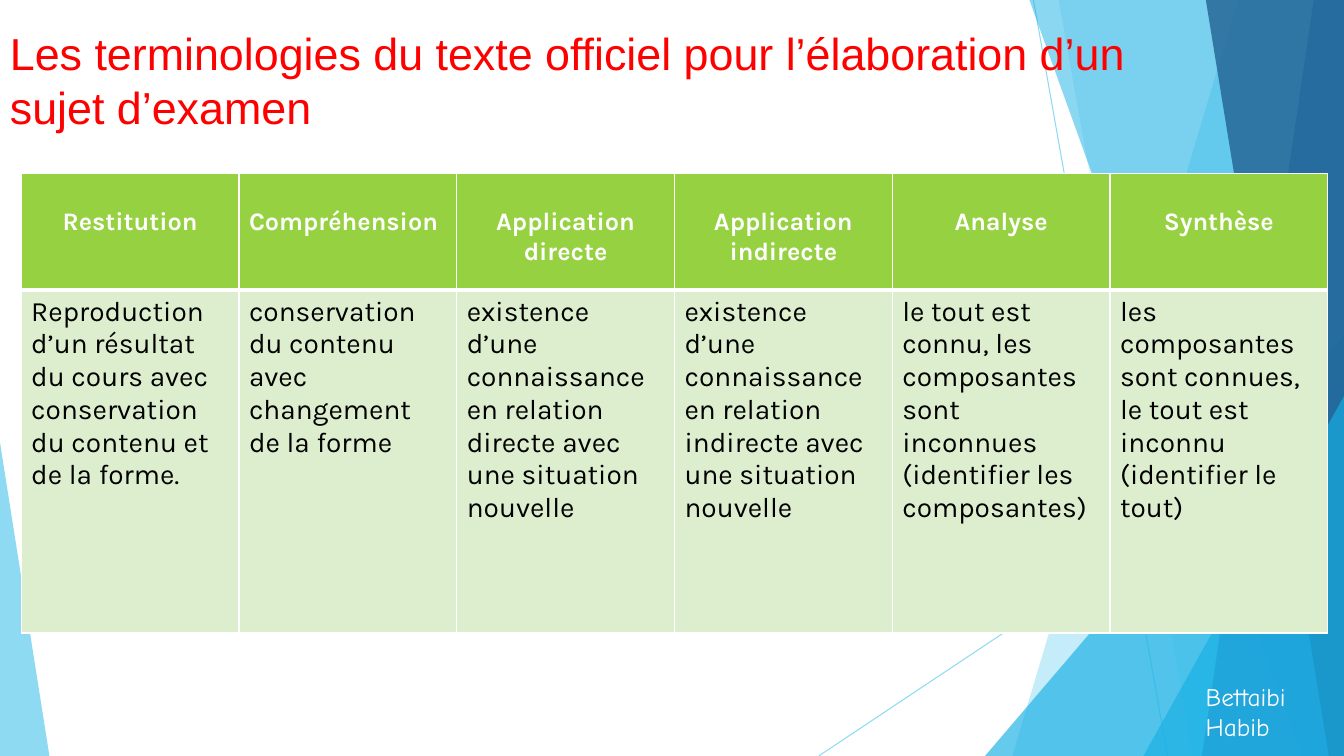
from lxml import etree
from pptx import Presentation
from pptx.dml.color import RGBColor
from pptx.enum.shapes import MSO_CONNECTOR, MSO_SHAPE
from pptx.enum.text import MSO_ANCHOR, PP_ALIGN
from pptx.oxml.ns import qn
from pptx.util import Inches, Pt

STRAIGHT = MSO_CONNECTOR.STRAIGHT
TRIANGLE = MSO_SHAPE.ISOSCELES_TRIANGLE
MIDDLE = MSO_ANCHOR.MIDDLE
CENTER = PP_ALIGN.CENTER
LEFT = PP_ALIGN.LEFT

COLORS = {
    "sky": "5FCBEF", "cyan": "17B0E4", "blue": "2E83C3", "navy": "226292",
    "white": "FFFFFF", "black": "000000", "red": "FF0000",
    "header": "96D141", "body": "DDEECF",
}
WIDTH, HEIGHT = 13.33, 7.5


def set_opacity(shape, percent):
    color = shape.element.spPr.find(".//" + qn("a:srgbClr"))
    etree.SubElement(color, qn("a:alpha")).set("val", str(percent * 1000))


def add_text(text_frame, text, font_name, size, color, bold=False, align=LEFT):
    text_frame.word_wrap = True
    paragraph = text_frame.paragraphs[0]
    paragraph.alignment = align
    run = paragraph.add_run()
    run.text = text
    run.font.name = font_name
    run.font.size = Pt(size)
    run.font.bold = bold
    run.font.color.rgb = RGBColor.from_string(COLORS[color])


presentation = Presentation()
presentation.slide_width = Inches(WIDTH)
presentation.slide_height = Inches(HEIGHT)
slide = presentation.slides.add_slide(presentation.slide_layouts[6])
shapes = slide.shapes

for start_x, start_y, end_x, end_y in [(10.25, 0, 11.58, HEIGHT), (WIDTH, 4.03, 8.12, HEIGHT)]:
    line = shapes.add_connector(
        STRAIGHT, Inches(start_x), Inches(start_y), Inches(end_x), Inches(end_y))
    line.line.color.rgb = RGBColor.from_string(COLORS["sky"])
    line.line.width = Pt(0.75)
    set_opacity(line, 70)
    etree.SubElement(line.element.spPr, qn("a:effectLst"))

facets = [
    ("band", (12.28, 10.04), "sky", 36),
    ("band", (10.5, 11.83), "sky", 20),
    ("triangle", (9.77, 3.33, 3.56, 1), "cyan", 66),
    ("band", (10.21, 12.91), "cyan", 50),
    ("band", (13.03, 11.92), "blue", 70),
    ("band", (11.96, 13.18), "navy", 80),
    ("triangle", (11.34, 3.93, 1.99, 1), "cyan", 66),
    ("triangle", (0, 4.39, 0.49, 0), "sky", 70),
]
for kind, geometry, color, opacity in facets:
    if kind == "band":
        top_x, bottom_x = geometry
        builder = shapes.build_freeform(Inches(top_x), 0)
        corners = [(WIDTH, 0), (WIDTH, HEIGHT), (bottom_x, HEIGHT)]
        builder.add_line_segments([(Inches(x), Inches(y)) for x, y in corners], close=True)
        facet = builder.convert_to_shape()
    else:
        left, top, width, apex = geometry
        facet = shapes.add_shape(
            TRIANGLE, Inches(left), Inches(top), Inches(width), Inches(HEIGHT - top))
        facet.adjustments[0] = apex
    facet.shadow.inherit = False
    facet.fill.solid()
    facet.fill.fore_color.rgb = RGBColor.from_string(COLORS[color])
    facet.line.fill.background()
    set_opacity(facet, opacity)

author = shapes.add_textbox(Inches(11.86), Inches(6.86), Inches(1.47), Inches(0.4))
author.text_frame.vertical_anchor = MIDDLE
add_text(author.text_frame, "Bettaibi Habib", "Comic Neue", 18, "white")

title = shapes.add_textbox(0, Inches(0.21), Inches(11.86), Inches(1.72))
add_text(
    title.text_frame,
    "Les terminologies du texte officiel pour l’élaboration d’un sujet d’examen",
    "Arial", 32, "red")

levels = [
    ("Restitution",
     "Reproduction d’un résultat du cours avec conservation du contenu et de la forme."),
    ("Compréhension",
     "conservation du contenu avec changement de la forme"),
    ("Application directe",
     "existence d’une connaissance en relation directe avec une situation nouvelle"),
    ("Application indirecte",
     "existence d’une connaissance en relation indirecte avec une situation nouvelle"),
    ("Analyse",
     "le tout est connu, les composantes sont inconnues (identifier les composantes)"),
    ("Synthèse",
     "les composantes sont connues, le tout est inconnu (identifier le tout)"),
]
table = shapes.add_table(
    2, len(levels), Inches(0.21), Inches(1.72), Inches(12.96), Inches(4.56)).table
table.rows[0].height = Inches(1.16)
table.rows[1].height = Inches(3.4)

for column, (level, definition) in enumerate(levels):
    table.columns[column].width = Inches(2.16)
    header, body = table.cell(0, column), table.cell(1, column)
    header.margin_top = Inches(0.34)
    header_align = LEFT if level == "Compréhension" else CENTER
    add_text(header.text_frame, level, "Karla", 18, "white", True, header_align)
    add_text(body.text_frame, definition, "Karla", 20, "black")

    for cell, fill, thick_side in [(header, "header", "lnB"), (body, "body", "lnT")]:
        cell.fill.solid()
        cell.fill.fore_color.rgb = RGBColor.from_string(COLORS[fill])
        properties = cell._tc.get_or_add_tcPr()
        for position, side in enumerate(["lnL", "lnR", "lnT", "lnB"]):
            border = etree.Element(qn("a:" + side))
            border.set("w", str(Pt(3 if side == thick_side else 1)))
            solid = etree.SubElement(border, qn("a:solidFill"))
            etree.SubElement(solid, qn("a:srgbClr")).set("val", COLORS["white"])
            properties.insert(position, border)

presentation.save("out.pptx")
